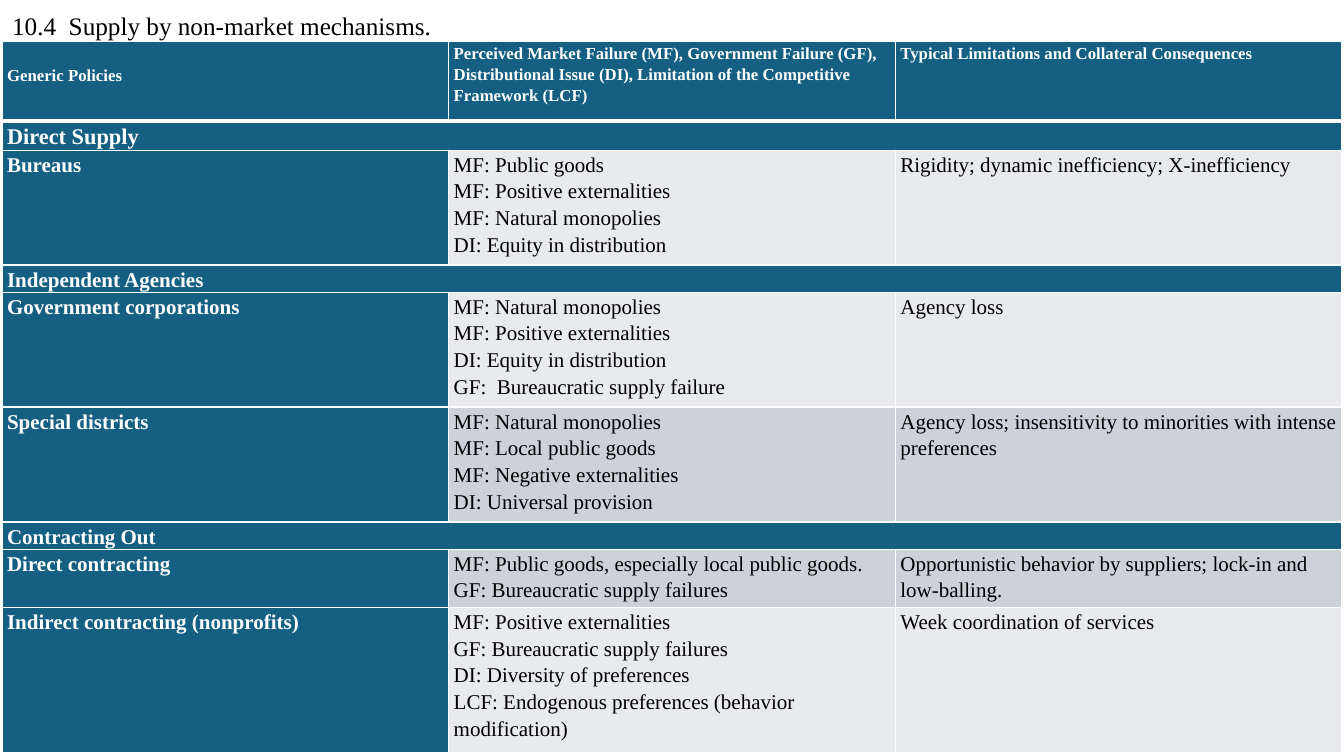
"""Build the slide on supply by non-market mechanisms."""
from dataclasses import dataclass

from lxml.etree import SubElement
from pptx import Presentation
from pptx.dml.color import RGBColor
from pptx.enum.text import MSO_ANCHOR, MSO_AUTO_SIZE, PP_ALIGN
from pptx.oxml.ns import qn
from pptx.util import Inches, Pt

FONT = "Times New Roman"
BLUE, LIGHT, DARK = "156082", "E8EAED", "CCD2D8"
WHITE, BLACK = "FFFFFF", "000000"
COLUMN_WIDTH = 4.43
HEADER_HEIGHT = 0.79
HEADINGS = (
    "Generic Policies",
    "Perceived Market Failure (MF), Government Failure (GF), Distributional Issue (DI), "
    "Limitation of the Competitive Framework (LCF)",
    "Typical Limitations and Collateral Consequences",
)


@dataclass(frozen=True)
class Section:
    name: str
    height: float = 0.27
    size: float = 15


@dataclass(frozen=True)
class Policy:
    name: str
    height: float
    failures: tuple[str, ...]
    limitations: str


ENTRIES = (
    Section("Direct Supply", 0.29, 16),
    Policy("Bureaus", 1.14,
           ("MF: Public goods", "MF: Positive externalities",
            "MF: Natural monopolies", "DI: Equity in distribution"),
           "Rigidity; dynamic inefficiency; X-inefficiency"),
    Section("Independent Agencies"),
    Policy("Government corporations", 1.14,
           ("MF: Natural monopolies", "MF: Positive externalities",
            "DI: Equity in distribution", "GF:  Bureaucratic supply failure"),
           "Agency loss"),
    Policy("Special districts", 1.14,
           ("MF: Natural monopolies", "MF: Local public goods",
            "MF: Negative externalities", "DI: Universal provision"),
           "Agency loss; insensitivity to minorities with intense preferences"),
    Section("Contracting Out"),
    Policy("Direct contracting", 0.58,
           ("MF: Public goods, especially local public goods.",
            "GF: Bureaucratic supply failures"),
           "Opportunistic behavior by suppliers; lock-in and low-balling."),
    Policy("Indirect contracting (nonprofits)", 1.44,
           ("MF: Positive externalities", "GF: Bureaucratic supply failures",
            "DI: Diversity of preferences",
            "LCF: Endogenous preferences (behavior modification)"),
           "Week coordination of services"),
)


def rgb(color: str) -> RGBColor:
    """Turn a hex string into a colour."""
    return RGBColor.from_string(color)


def format_text(frame, size: float, color: str, bold: bool, spacing: float) -> None:
    """Format every paragraph and run of a text frame."""
    for paragraph in frame.paragraphs:
        paragraph.alignment = PP_ALIGN.LEFT
        paragraph.line_spacing = spacing
        for run in paragraph.runs:
            run.font.name = FONT
            run.font.size = Pt(size)
            run.font.bold = bold
            run.font.color.rgb = rgb(color)


def add_borders(cell, top: float = 1, bottom: float = 1) -> None:
    """Draw white borders, with widths in points, around a cell."""
    properties = cell._tc.get_or_add_tcPr()
    for side, width in (("L", 1), ("R", 1), ("T", top), ("B", bottom)):
        border = SubElement(properties, qn(f"a:ln{side}"), w=str(Pt(width)))
        fill = SubElement(border, qn("a:solidFill"))
        SubElement(fill, qn("a:srgbClr"), val=WHITE)


def fill_cell(cell, text: str, size: float, fill: str = BLUE) -> None:
    """Write a cell: bold white on blue, plain black on grey."""
    cell.margin_left = cell.margin_right = Inches(0.05)
    cell.margin_top = cell.margin_bottom = 0
    cell.fill.solid()
    cell.fill.fore_color.rgb = rgb(fill)
    cell.text_frame.text = text
    on_blue = fill == BLUE
    format_text(cell.text_frame, size, WHITE if on_blue else BLACK, on_blue, 1.15)


def add_title(slide) -> None:
    """Place and format the slide title."""
    title = slide.shapes.title
    title.left, title.top = Inches(0.02), Inches(0.04)
    title.width, title.height = Inches(11.5), Inches(0.47)
    frame = title.text_frame
    frame.text = "10.4  Supply by non-market mechanisms."
    frame.auto_size = MSO_AUTO_SIZE.NONE
    frame.vertical_anchor = MSO_ANCHOR.MIDDLE
    format_text(frame, 18, BLACK, False, 0.9)


def add_policy_table(slide) -> None:
    """Add the table of policies grouped by section."""
    heights = [HEADER_HEIGHT] + [entry.height for entry in ENTRIES]
    table = slide.shapes.add_table(
        len(heights), len(HEADINGS), Inches(0.02), Inches(0.41),
        Inches(COLUMN_WIDTH * len(HEADINGS)), Inches(sum(heights))).table
    for column in table.columns:
        column.width = Inches(COLUMN_WIDTH)
    for index, (row, height) in enumerate(zip(table.rows, heights)):
        row.height = Inches(height)
        for cell in row.cells:
            add_borders(cell, 3 if index == 1 else 1, 3 if index == 0 else 1)

    for cell, heading in zip(table.rows[0].cells, HEADINGS):
        fill_cell(cell, heading, 12)
    table.cell(0, 0).margin_top = Inches(0.22)

    for index, entry in enumerate(ENTRIES, start=1):
        name, failures, limitations = table.rows[index].cells
        if isinstance(entry, Section):
            name.merge(limitations)
            fill_cell(name, entry.name, entry.size)
        else:
            band = DARK if index % 2 else LIGHT
            fill_cell(name, entry.name, 15)
            fill_cell(failures, "\n".join(entry.failures), 15, band)
            fill_cell(limitations, entry.limitations, 15, band)


def main() -> None:
    """Build and save the presentation."""
    presentation = Presentation()
    presentation.slide_width, presentation.slide_height = Inches(13.33), Inches(7.5)
    slide = presentation.slides.add_slide(presentation.slide_layouts[5])
    add_title(slide)
    add_policy_table(slide)
    presentation.save("out.pptx")


if __name__ == "__main__":
    main()
